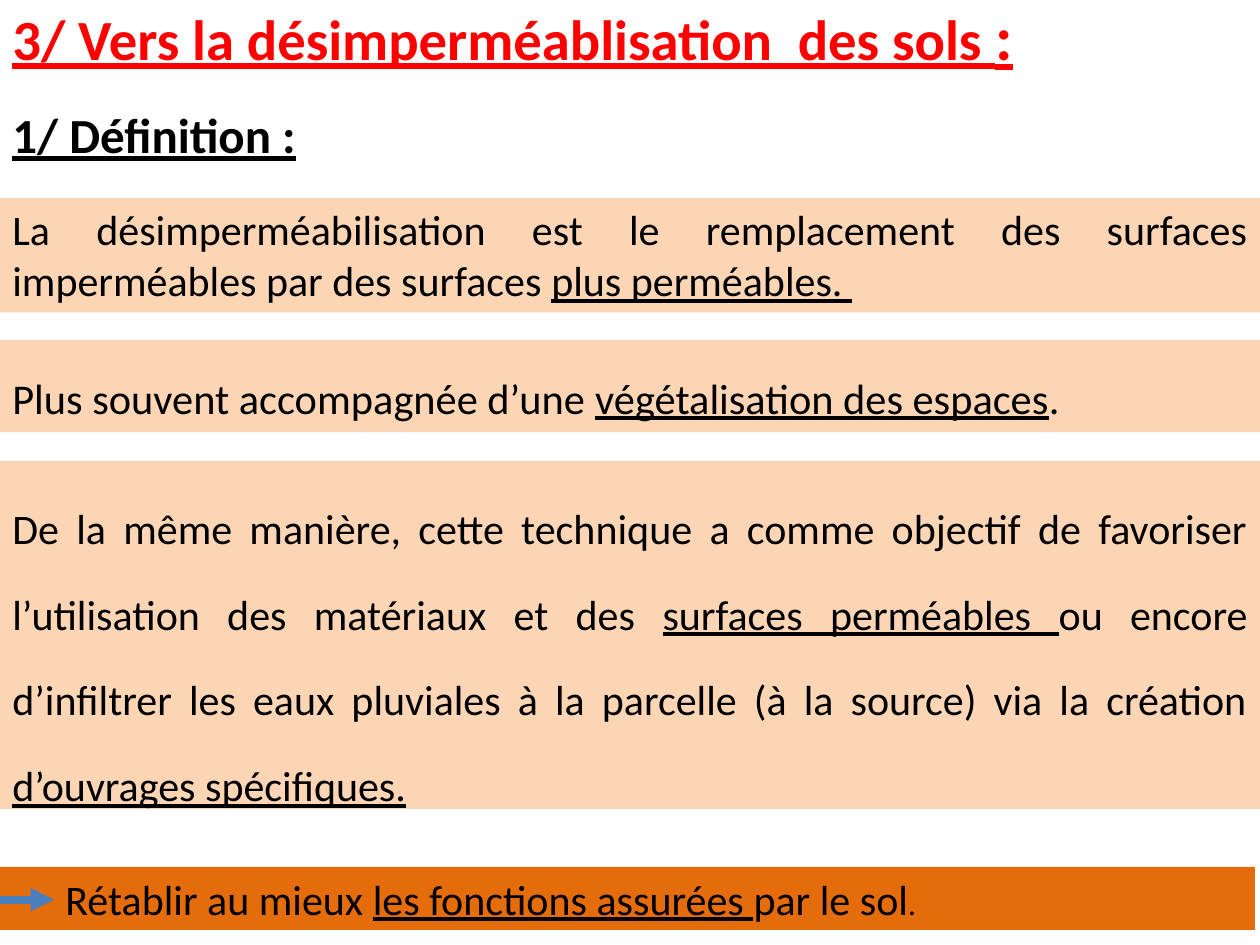
from lxml.etree import SubElement
from pptx import Presentation
from pptx.dml.color import RGBColor
from pptx.enum.shapes import MSO_CONNECTOR
from pptx.enum.text import MSO_ANCHOR, PP_ALIGN
from pptx.oxml.ns import qn
from pptx.util import Inches, Pt

RED = RGBColor(0xFF, 0x00, 0x00)
BLACK = RGBColor(0x00, 0x00, 0x00)
PEACH = RGBColor(0xFC, 0xD5, 0xB5)
ORANGE = RGBColor(0xE4, 0x6C, 0x0A)
BLUE = RGBColor(0x4B, 0x7E, 0xBC)
WIDTH = Inches(10)
HEIGHT = Inches(7.5)


def across(percent):
    return round(WIDTH * percent / 100)


def down(percent):
    return round(HEIGHT * percent / 100)


def add_text(page, area, size, color=BLACK):
    left, top, width, height = area
    box = page.shapes.add_textbox(across(left), down(top), across(width), down(height))
    box.text_frame.word_wrap = True
    para = box.text_frame.paragraphs[0]
    para.font.name = "Calibri"
    para.font.size = Pt(size)
    para.font.color.rgb = color
    return box, para


def add_span(para, text, underline=False):
    span = para.add_run()
    span.text = text
    span.font.underline = underline
    return span


def add_heading(page, area, text, size, color=BLACK):
    box, para = add_text(page, area, size, color)
    box.text_frame.vertical_anchor = MSO_ANCHOR.MIDDLE
    para.font.bold = True
    para.font.underline = True
    para.add_run().text = text
    return para


def add_band(page, area, fill, spans, size=24, spacing=1.0):
    box, para = add_text(page, area, size)
    box.fill.solid()
    box.fill.fore_color.rgb = fill
    para.alignment = PP_ALIGN.JUSTIFY
    para.line_spacing = spacing
    for text, underline in spans:
        add_span(para, text, underline)
    return box, para


def add_conclusion(page, area):
    box, para = add_band(page, area, ORANGE, [
        ("Rétablir au mieux ", False),
        ("les fonctions assurées ", True),
        ("par le sol", False),
    ])
    box.text_frame.margin_left = across(5.6)
    add_span(para, ".").font.size = Pt(18)

    middle = down(95.2)
    arrow = page.shapes.add_connector(
        MSO_CONNECTOR.STRAIGHT, 0, middle, across(4.3), middle)
    arrow.line.color.rgb = BLUE
    arrow.line.width = Pt(4.5)
    SubElement(arrow.line._get_or_add_ln(), qn("a:tailEnd"), type="triangle")
    SubElement(arrow._element.spPr, qn("a:effectLst"))


def build_page(page):
    title = add_heading(page, (0, 0, 85, 7.47),
                        "3/ Vers la désimperméablisation  des sols ", 32.4, RED)
    colon = title.add_run()
    colon.text = ":"
    colon.font.size = Pt(36)
    add_heading(page, (0, 10.4, 93.8, 7.6), "1/ Définition :", 28)

    add_band(page, (0, 20.93, 100, 12.13), PEACH, [
        ("La désimperméabilisation est le remplacement des surfaces "
         "imperméables par des surfaces ", False),
        ("plus perméables. ", True),
    ])
    greening, para = add_band(page, (0, 36, 100, 9.73), PEACH, [
        ("Plus souvent accompagnée d’une ", False),
        ("végétalisation des espaces", True),
        (".", False),
    ], size=24.2, spacing=1.5)
    para.space_before = Pt(4.84)
    add_band(page, (0, 48.8, 100, 36.8), PEACH, [
        ("De la même manière, cette technique a comme objectif de favoriser "
         "l’utilisation des matériaux et des ", False),
        ("surfaces perméables ", True),
        ("ou encore d’infiltrer les eaux pluviales à la parcelle "
         "(à la source) via la création ", False),
        ("d’ouvrages spécifiques.", True),
    ], spacing=1.7)
    add_conclusion(page, (-0.4, 91.73, 100, 6.67))


def main():
    deck = Presentation()
    deck.slide_width = WIDTH
    deck.slide_height = HEIGHT
    build_page(deck.slides.add_slide(deck.slide_layouts[6]))
    deck.save("out.pptx")


if __name__ == "__main__":
    main()
